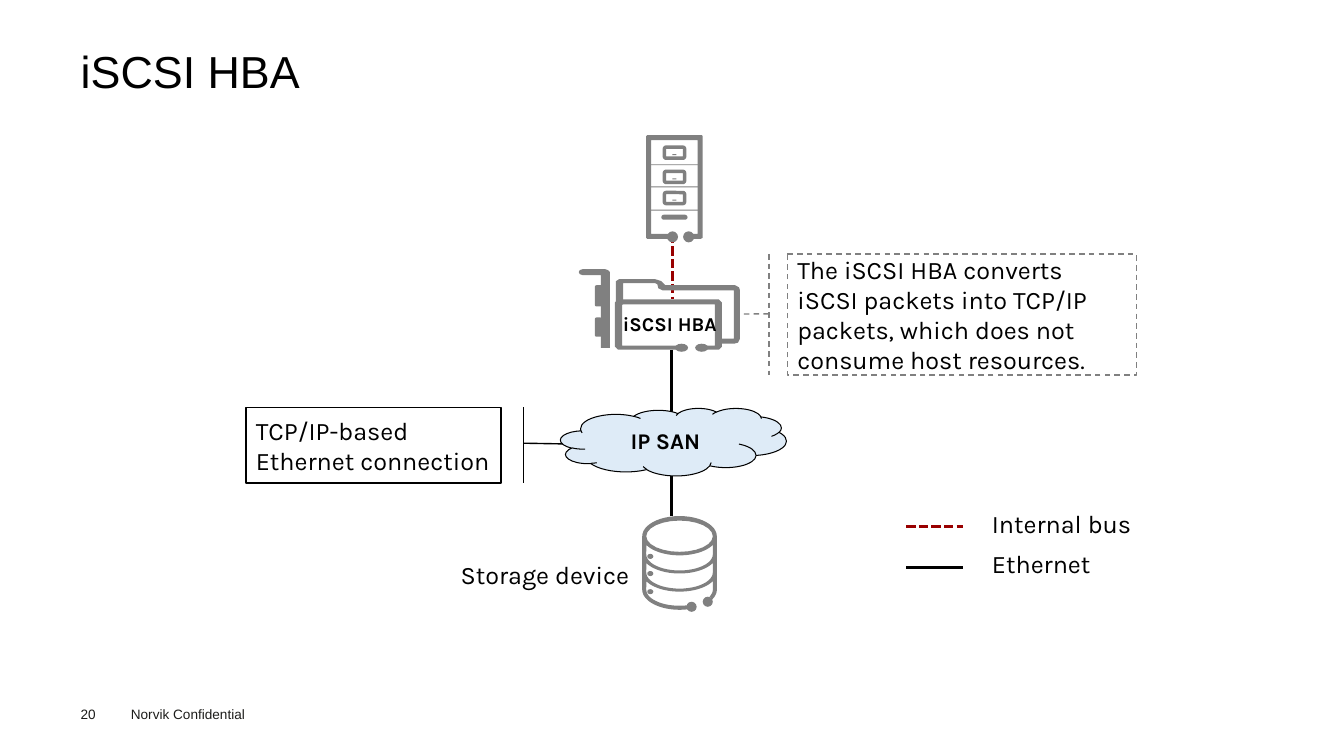
from dataclasses import dataclass
from math import cos, radians, sin

from lxml import etree
from pptx import Presentation
from pptx.dml.color import RGBColor
from pptx.enum import dml, shapes, text
from pptx.oxml.ns import qn
from pptx.util import Inches, Pt


@dataclass(frozen=True)
class Theme:
    heading_font: str = "Arial"
    body_font: str = "Karla"
    ink: str = "000000"
    footer_ink: str = "1D1D1B"
    icon: str = "808080"
    bus: str = "990000"
    cloud: str = "DEEBF7"
    title_size: float = 32
    body_size: float = 18
    cloud_size: float = 16
    card_size: float = 14
    footer_size: float = 9.7


THEME = Theme()
SHAPE = shapes.MSO_SHAPE
DASH = dml.MSO_LINE.DASH
BUS_DASH = dml.MSO_LINE.SQUARE_DOT


def write(frame, words, size=THEME.body_size, font=THEME.body_font, color=THEME.ink,
          bold=False, align=text.PP_ALIGN.LEFT, anchor=text.MSO_ANCHOR.TOP,
          spacing=None, inset=True):
    frame.word_wrap = True
    frame.vertical_anchor = anchor
    if not inset:
        frame.margin_left = frame.margin_right = frame.margin_top = frame.margin_bottom = 0
    paragraph = frame.paragraphs[0]
    paragraph.alignment = align
    paragraph.line_spacing = spacing
    run = paragraph.add_run()
    run.text = words
    run.font.name = font
    run.font.size = Pt(size)
    run.font.bold = bold
    run.font.color.rgb = RGBColor.from_string(color)


def add_label(slide, box, words, **style):
    label = slide.shapes.add_textbox(*map(Inches, box))
    write(label.text_frame, words, **style)


def paint(shape, fill=None, line=None, width=1, dash=None):
    shape.shadow.inherit = False
    if fill:
        shape.fill.solid()
        shape.fill.fore_color.rgb = RGBColor.from_string(fill)
    else:
        shape.fill.background()
    if line:
        shape.line.color.rgb = RGBColor.from_string(line)
        shape.line.width = Pt(width)
        shape.line.dash_style = dash
    else:
        shape.line.fill.background()


def add_preset(slide, kind, box, adjustments=(), **look):
    shape = slide.shapes.add_shape(kind, *map(Inches, box))
    for index, value in enumerate(adjustments):
        shape.adjustments[index] = value
    paint(shape, **look)
    return shape


def add_callout(slide, box, adjustments, words, flipped=False, **look):
    callout = add_preset(slide, SHAPE.LINE_CALLOUT_1_BORDER_AND_ACCENT_BAR, box,
                         adjustments, **look)
    if flipped:
        callout._element.spPr.find(qn("a:xfrm")).set("flipH", "1")
    write(callout.text_frame, words, anchor=text.MSO_ANCHOR.MIDDLE)


def add_link(slide, start, end, color, dash=None):
    link = slide.shapes.add_connector(shapes.MSO_CONNECTOR.STRAIGHT,
                                      *map(Inches, (*start, *end)))
    link.line.color.rgb = RGBColor.from_string(color)
    link.line.width = Pt(2.25)
    link.line.dash_style = dash
    etree.SubElement(link._element.spPr, qn("a:effectLst"))


def add_outline(slide, *contours):
    """Fill closed contours as one icon part; inner contours become holes."""
    scaled = [[(Inches(x), Inches(y)) for x, y in contour] for contour in contours]
    builder = slide.shapes.build_freeform(*scaled[0][0])
    for index, points in enumerate(scaled):
        if index:
            builder.move_to(*points[0])
        builder.add_line_segments(points[1:], close=True)
    paint(builder.convert_to_shape(), fill=THEME.icon)


def arc(center_y, radius_x, radius_y, start, end, center_x=6.74, steps=24):
    angles = [radians(start + (end - start) * i / steps) for i in range(steps + 1)]
    return [(center_x + radius_x * cos(a), center_y + radius_y * sin(a)) for a in angles]


def add_ports(slide, centers, width, height):
    for x, y in centers:
        add_preset(slide, SHAPE.OVAL, (x - width / 2, y - height / 2, width, height),
                   fill=THEME.icon)


def draw_server(slide):
    add_outline(slide, [
        (6.95, 2.37), (6.83, 2.37), (6.83, 2.32), (6.92, 2.32), (6.92, 1.39), (6.46, 1.39),
        (6.46, 2.32), (6.65, 2.32), (6.65, 2.37), (6.42, 2.37), (6.41, 2.36), (6.41, 1.35),
        (6.42, 1.34), (6.96, 1.34), (6.97, 1.35), (6.97, 2.36)])
    for drawer_top, divider_top in ((1.44, 1.63), (1.68, 1.85), (1.89, 2.08)):
        add_preset(slide, SHAPE.ROUNDED_RECTANGLE, (6.59, drawer_top + 0.02, 0.2, 0.11),
                   [0.15], line=THEME.icon, width=2.5)
        for box in ((6.67, drawer_top + 0.09, 0.04, 0.01), (6.44, divider_top, 0.51, 0.01)):
            add_preset(slide, SHAPE.RECTANGLE, box, fill=THEME.icon)
    add_preset(slide, SHAPE.ROUNDED_RECTANGLE, (6.56, 2.13, 0.26, 0.05), [0.5],
               fill=THEME.icon)
    add_ports(slide, [(6.67, 2.35), (6.83, 2.35)], 0.11, 0.11)


def draw_storage(slide):
    def disk_edge(y):
        return arc(y, 0.37, 0.19, 153, 27)

    shell = (arc(5.32, 0.37, 0.2, 0, -180) + arc(5.85, 0.37, 0.2, 180, 77)
             + arc(5.85, 0.33, 0.16, 76, 180) + disk_edge(5.68)
             + arc(5.85, 0.33, 0.16, 0, 25) + arc(5.85, 0.37, 0.2, 30, 0))
    bands = [disk_edge(y) + arc(y + 0.18, 0.33, 0.16, 0, 180) for y in (5.32, 5.5)]
    add_outline(slide, shell, arc(5.32, 0.33, 0.155, 0, 360), *bands)
    add_ports(slide, [(6.86, 6.02), (7.02, 5.97)], 0.1, 0.1)
    add_ports(slide, [(6.45, y) for y in (5.52, 5.69, 5.87)], 0.06, 0.05)


def draw_adapter_card(slide):
    add_outline(slide, [  # front panel
        (7.13, 3.47), (6.95, 3.47), (6.93, 3.45), (6.95, 3.43), (7.09, 3.43), (7.09, 3.02),
        (6.17, 3.02), (6.17, 3.43), (6.78, 3.43), (6.8, 3.45), (6.78, 3.47), (6.13, 3.47),
        (6.1, 3.44), (6.1, 3.0), (6.13, 2.97), (7.13, 2.97), (7.16, 3.0), (7.16, 3.44)])
    add_outline(slide, [  # rear panel
        (7.16, 3.36), (7.28, 3.36), (7.28, 2.88), (6.57, 2.88), (6.53, 2.86), (6.52, 2.82),
        (6.5, 2.81), (6.18, 2.81), (6.18, 3.02), (6.14, 3.03), (6.11, 3.01), (6.11, 2.79),
        (6.14, 2.77), (6.5, 2.77), (6.56, 2.79), (6.6, 2.83), (7.29, 2.83), (7.33, 2.85),
        (7.34, 2.88), (7.34, 3.36), (7.32, 3.4), (7.28, 3.41), (7.12, 3.41), (7.1, 3.38),
        (7.1, 3.02), (7.16, 3.02)])
    for top, height in ((2.83, 0.21), (3.15, 0.19)):
        add_preset(slide, SHAPE.ROUNDED_RECTANGLE, (5.9, top, 0.11, height), [0.15],
                   fill=THEME.icon)
    add_outline(slide, [  # bracket
        (5.78, 2.73), (5.96, 2.73), (5.96, 3.45), (6.05, 3.45), (6.05, 2.7), (6.03, 2.68),
        (6.0, 2.67), (5.78, 2.67), (5.75, 2.68), (5.74, 2.7), (5.75, 2.72)])
    add_ports(slide, [(6.76, 3.45), (6.96, 3.45)], 0.13, 0.08)
    add_label(slide, (6.08, 3.05, 1.25, 0.34), "iSCSI HBA", size=THEME.card_size,
              bold=True)


def draw_legend(slide):
    entries = (("Internal bus", THEME.bus, BUS_DASH), ("Ethernet", THEME.ink, None))
    for index, (name, color, dash) in enumerate(entries):
        line_y = 5.22 + 0.41 * index
        add_link(slide, (8.99, line_y), (9.55, line_y), color, dash)
        add_label(slide, (9.74, 4.87 + 0.4 * index, 1.94, 0.49), name, spacing=1.4)


def draw_title_and_footer(slide):
    title = slide.shapes.title
    title.left, title.top, title.width, title.height = map(Inches, (0.8, 0.49, 11.73, 0.54))
    write(title.text_frame, "iSCSI HBA", size=THEME.title_size, font=THEME.heading_font,
          spacing=0.9, inset=False)
    footer = dict(size=THEME.footer_size, font=THEME.heading_font, color=THEME.footer_ink)
    add_label(slide, (1.2, 6.95, 1.6, 0.27), "Norvik Confidential", **footer)
    add_label(slide, (0.8, 7, 0.4, 0.16), "20", inset=False, **footer)


def main():
    presentation = Presentation()
    presentation.slide_width, presentation.slide_height = Inches(13.33), Inches(7.5)
    slide = presentation.slides.add_slide(presentation.slide_layouts[5])
    draw_title_and_footer(slide)
    add_callout(slide, (2.44, 4.04, 2.53, 0.75), (0.476, -0.089, 0.486, -0.256),
                "TCP/IP-based Ethernet connection", flipped=True, line=THEME.ink)
    add_callout(slide, (7.81, 2.52, 3.46, 1.2), (0.495, -0.053, 0.497, -0.156),
                "The iSCSI HBA converts iSCSI packets into TCP/IP packets, "
                "which does not consume host resources.", line=THEME.icon, dash=DASH)
    draw_legend(slide)
    add_link(slide, (6.67, 2.32), (6.67, 2.97), THEME.bus, BUS_DASH)
    add_label(slide, (4.47, 5.38, 2.11, 0.49), "Storage device", spacing=1.4)
    add_link(slide, (6.66, 3.47), (6.66, 5.12), THEME.ink)
    cloud = add_preset(slide, SHAPE.CLOUD, (5.56, 4.05, 2.24, 0.67), fill=THEME.cloud,
                       line=THEME.ink, width=0.75)
    write(cloud.text_frame, "IP SAN", size=THEME.cloud_size, bold=True,
          align=text.PP_ALIGN.CENTER, anchor=text.MSO_ANCHOR.MIDDLE)
    draw_server(slide)
    draw_storage(slide)
    draw_adapter_card(slide)
    presentation.save("out.pptx")


if __name__ == "__main__":
    main()
